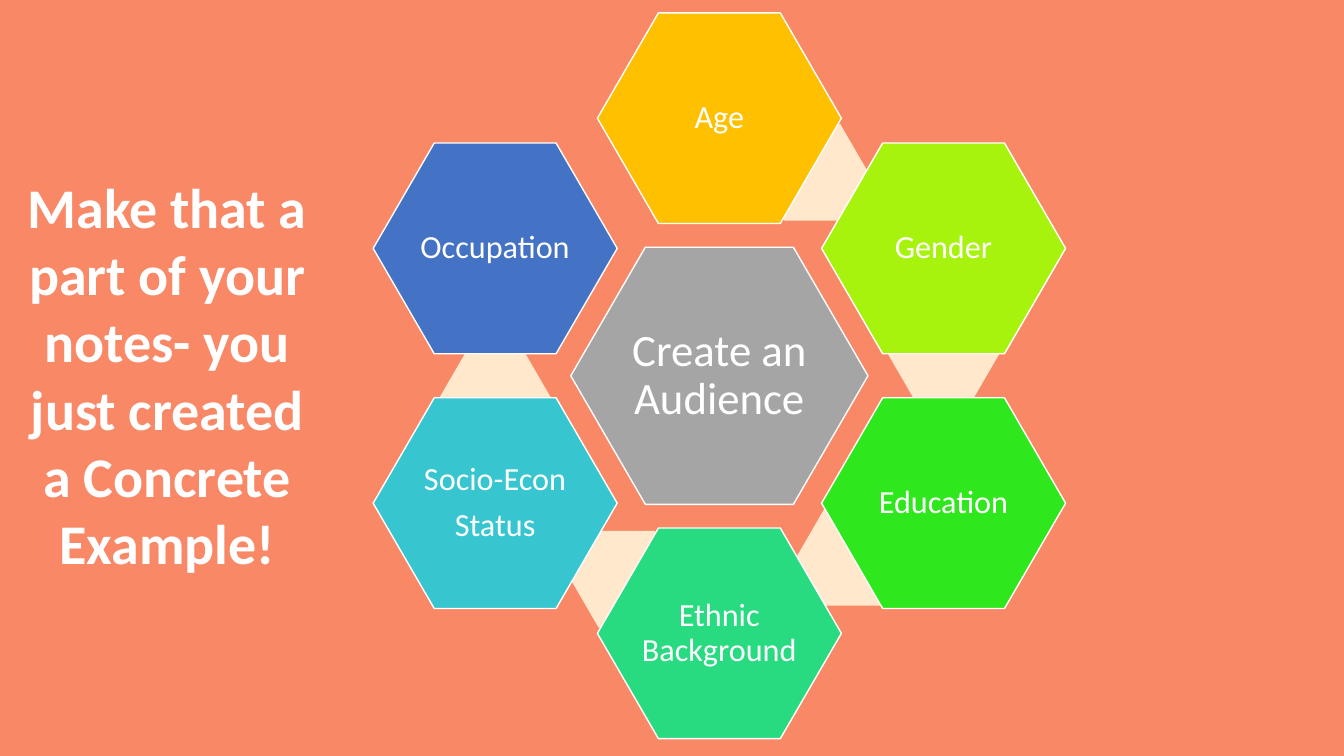
"""Build a slide with a ring of audience traits around a central hexagon."""
from pptx import Presentation
from pptx.dml import color
from pptx.enum import shapes, text
from pptx.util import Cm, Pt

WHITE = "FFFFFF"
CENTER_X, CENTER_Y = 18.13, 9.47
COLUMN, HALF_ROW, FULL_ROW = 5.65, 3.21, 6.49


def rgb(value):
    return color.RGBColor.from_string(value)


def add_hexagon(dx, dy, width, height, fill, lines=(), size=23):
    shape = slide.shapes.add_shape(
        shapes.MSO_SHAPE.HEXAGON,
        Cm(CENTER_X + dx - width / 2), Cm(CENTER_Y + dy - height / 2),
        Cm(width), Cm(height))
    shape.adjustments[0] = 0.29
    shape.shadow.inherit = False
    shape.fill.solid()
    shape.fill.fore_color.rgb = rgb(fill)
    if not lines:
        shape.line.fill.background()
        return
    shape.line.color.rgb = rgb(WHITE)
    shape.line.width = Pt(1)
    frame = shape.text_frame
    frame.word_wrap = True
    frame.vertical_anchor = text.MSO_ANCHOR.MIDDLE
    frame.margin_left = frame.margin_right = Cm(0.08)
    frame.margin_top = frame.margin_bottom = Cm(0.08)
    for index, line in enumerate(lines):
        paragraph = frame.add_paragraph() if index else frame.paragraphs[0]
        paragraph.alignment = text.PP_ALIGN.CENTER
        paragraph.line_spacing = 0.9
        paragraph.space_after = Pt(size * 0.35)
        run = paragraph.add_run()
        run.text = line
        run.font.name = "Calibri"
        run.font.size = Pt(size)
        run.font.color.rgb = rgb(WHITE)


presentation = Presentation()
presentation.slide_width, presentation.slide_height = Cm(33.87), Cm(19.05)
slide = presentation.slides.add_slide(presentation.slide_layouts[5])
slide.background.fill.solid()
slide.background.fill.fore_color.rgb = rgb("F98866")

title = slide.shapes.title
title.left, title.top, title.width, title.height = Cm(0.38), Cm(4.22), Cm(7.67), Cm(10.52)
title.text_frame.word_wrap = True
title.text_frame.auto_size = text.MSO_AUTO_SIZE.SHAPE_TO_FIT_TEXT
title.text_frame.vertical_anchor = text.MSO_ANCHOR.TOP
heading = title.text_frame.paragraphs[0]
heading.alignment = text.PP_ALIGN.CENTER
message = heading.add_run()
message.text = "Make that a part of your notes- you just created a Concrete Example!"
message.font.name = "Calibri"
message.font.size = Pt(40)
message.font.bold = True
message.font.color.rgb = rgb(WHITE)

add_hexagon(0, 0, 7.49, 6.48, "A5A5A5", ["Create an Audience"], 32)

traits = [
    (["Age"], "FFC000", 0, -FULL_ROW, (2.34, -5.13)),
    (["Gender"], "A7F30E", COLUMN, -HALF_ROW, (5.65, -0.56)),
    (["Education"], "2EE71C", COLUMN, HALF_ROW, (3.35, 4.57)),
    (["Ethnic Background"], "29DB80", 0, FULL_ROW, (-2.34, 5.13)),
    (["Socio-Econ", "Status"], "37C6CF", -COLUMN, HALF_ROW, (-5.65, 0.56)),
    (["Occupation"], "4472C4", -COLUMN, -HALF_ROW, None),
]
for lines, fill, dx, dy, link in traits:
    if link:
        add_hexagon(*link, 2.82, 2.44, "FFE8CC")
    add_hexagon(dx, dy, 6.15, 5.31, fill, lines)

presentation.save("out.pptx")
